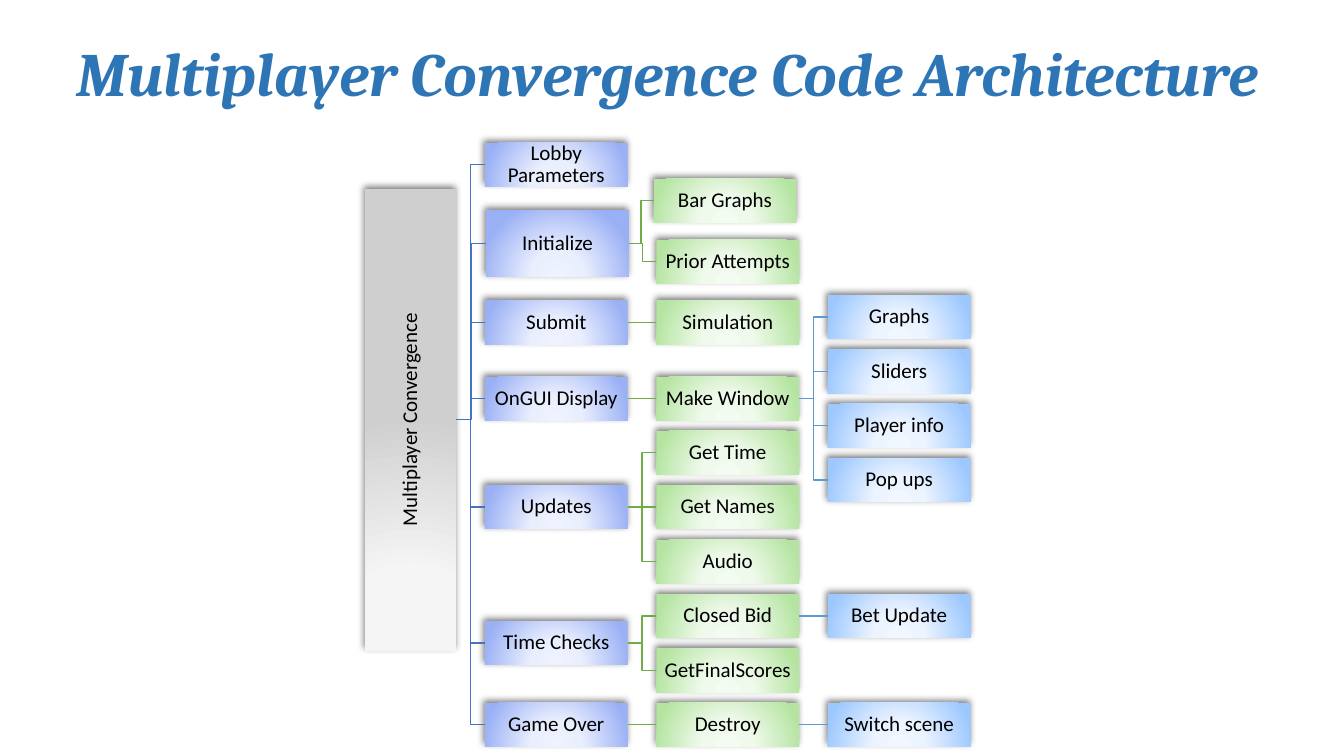
import lxml.etree
import pptx
import pptx.dml.color
import pptx.enum.shapes
import pptx.enum.text
import pptx.oxml
import pptx.util

Cm = pptx.util.Cm
Pt = pptx.util.Pt
RGB = pptx.dml.color.RGBColor
KIND = pptx.enum.shapes.MSO_CONNECTOR
RECT = pptx.enum.shapes.MSO_SHAPE.RECTANGLE
MID = pptx.enum.text.MSO_ANCHOR.MIDDLE
MAIN = "http://schemas.openxmlformats.org/drawingml/2006/main"

BLACK = RGB(0x00, 0x00, 0x00)
TITLE = RGB(0x2E, 0x75, 0xB6)
GREY = [RGB(0xF8, 0xF8, 0xF8), RGB(0xF5, 0xF5, 0xF5), RGB(0xCF, 0xCF, 0xCF)]
FILLS = [
    [RGB(0xEF, 0xF3, 0xFF), RGB(0xEA, 0xEF, 0xFE), RGB(0x9A, 0xB0, 0xF5)],
    [RGB(0xF3, 0xFC, 0xF0), RGB(0xF0, 0xFA, 0xEC), RGB(0xB4, 0xE4, 0xA0)],
    [RGB(0xF1, 0xF7, 0xFF), RGB(0xEC, 0xF4, 0xFF), RGB(0x9D, 0xC8, 0xFF)],
]
LINES = [RGB(0x44, 0x72, 0xC4), RGB(0x70, 0xAD, 0x47), RGB(0x5B, 0x9B, 0xD5)]

FRAME = {"vertical_anchor": MID, "word_wrap": True,
         "auto_size": pptx.enum.text.MSO_AUTO_SIZE.NONE}
TIGHT = dict.fromkeys(
    ["margin_left", "margin_top", "margin_right", "margin_bottom"], Cm(0.03))
PARA = {"alignment": pptx.enum.text.PP_ALIGN.CENTER, "line_spacing": 0.9}
LABEL = {"name": "Calibri", "size": Pt(15)}
HEAD = {"name": "Cambria", "size": Pt(44), "bold": True, "italic": True}

WIDE, HIGH = 3.6, 1.1
PITCH, STEP, FIRST = 1.37, 4.32, 3.02
ROOT_W, ROOT_H, ROOT_ROW = 2.29, 11.61, 5.61
ODD = {"Initialize": (0.03, 1.68), "Bar Graphs": (-0.07, HIGH)}

# Rows count upward from the bottom of the chart.
TREE = [
    ("Lobby Parameters", 10.3, []),
    ("Initialize", 8.85, [("Bar Graphs", 9.64, []),
                          ("Prior Attempts", 8.52, [])]),
    ("Submit", 7.4, [("Simulation", 7.4, [])]),
    ("OnGUI Display", 6, [("Make Window", 6, [
        ("Graphs", 7.5, []), ("Sliders", 6.5, []),
        ("Player info", 5.5, []), ("Pop ups", 4.5, [])])]),
    ("Updates", 4, [("Get Time", 5, []), ("Get Names", 4, []),
                    ("Audio", 3, [])]),
    ("Time Checks", 1.5, [("Closed Bid", 2, [("Bet Update", 2, [])]),
                          ("GetFinalScores", 1, [])]),
    ("Game Over", 0, [("Destroy", 0, [("Switch scene", 0, [])])]),
]


def style(item, vals):
    """Set each named value on the item."""
    for name, val in vals.items():
        setattr(item, name, val)


def write(frame, text, font, tint, para):
    """Fill a text frame with one formatted paragraph."""
    style(frame, FRAME)
    frame.text = text
    line = frame.paragraphs[0]
    style(line, para)
    style(line.runs[0].font, font)
    line.runs[0].font.color.rgb = tint


def paint(shape, tints):
    """Give a shape its round gradient and soft shadow."""
    stops = "".join(
        f'<a:gs pos="{pos}"><a:srgbClr val="{tint}"/></a:gs>'
        for pos, tint in zip((0, 34000, 100000), tints))
    fill = pptx.oxml.parse_xml(
        f'<a:gradFill xmlns:a="{MAIN}" rotWithShape="0"><a:gsLst>{stops}'
        '</a:gsLst><a:path path="circle"><a:fillToRect l="50000" t="155000" '
        'r="50000" b="-55000"/></a:path></a:gradFill>')
    shade = pptx.oxml.parse_xml(
        f'<a:outerShdw xmlns:a="{MAIN}" blurRad="63500" dist="25400" '
        'dir="14700000" algn="t" rotWithShape="0"><a:srgbClr val="000000">'
        '<a:alpha val="50000"/></a:srgbClr></a:outerShdw>')
    shape.line.fill.background()
    shape.shadow.inherit = False
    props = shape._element.spPr
    props.find(f"{{{MAIN}}}prstGeom").addnext(fill)
    props.find(f"{{{MAIN}}}effectLst").append(shade)


def block(slide, text, box, tints):
    """Draw one labelled box."""
    shape = slide.shapes.add_shape(RECT, *map(Cm, box))
    paint(shape, tints)
    style(shape.text_frame, TIGHT)
    write(shape.text_frame, text, LABEL, BLACK, PARA)
    return shape


def link(slide, start, child, tint, owner=None):
    """Join a start point to the left side of a child box."""
    end = child.left, child.top + child.height // 2
    flat = abs(start[1] - end[1]) < Cm(0.02)
    kind = KIND.STRAIGHT if flat else KIND.ELBOW
    wire = slide.shapes.add_connector(kind, *start, *end)
    if owner is not None:
        wire.begin_connect(owner, 3)
    wire.end_connect(child, 1)
    wire.line.color.rgb = tint
    wire.line.width = Pt(1)
    lxml.etree.SubElement(wire._element.spPr, f"{{{MAIN}}}effectLst")


def branch(slide, nodes, box, start, level=0, owner=None):
    """Draw a level of the tree and the levels under it."""
    left, top, _, height = box
    base = top + height - HIGH / 2
    for text, row, kids in nodes:
        shift, tall = ODD.get(text, (0, HIGH))
        place = (left + FIRST + level * STEP + shift,
                 base - row * PITCH - tall / 2, WIDE, tall)
        shape = block(slide, text, place, FILLS[level])
        link(slide, start, shape, LINES[level], owner)
        edge = shape.left + shape.width, shape.top + shape.height // 2
        branch(slide, kids, box, edge, level + 1, shape)


def chart(slide, box):
    """Draw the upright root box and its tree."""
    left, top, _, height = box
    mid = top + height - HIGH / 2 - ROOT_ROW * PITCH
    place = (left + (ROOT_W - ROOT_H) / 2, mid - ROOT_W / 2, ROOT_H, ROOT_W)
    root = block(slide, "Multiplayer Convergence", place, GREY)
    root.rotation = 270
    branch(slide, TREE, box, (Cm(left + ROOT_W), Cm(mid)))


def title(slide, box):
    """Place and format the slide title."""
    shape = slide.shapes.title
    style(shape, dict(zip(("left", "top", "width", "height"), map(Cm, box))))
    write(shape.text_frame, "Multiplayer Convergence Code Architecture",
          HEAD, TITLE, {"alignment": PARA["alignment"]})


def main():
    """Build and save the slide."""
    deck = pptx.Presentation()
    style(deck, {"slide_width": Cm(33.87), "slide_height": Cm(19.05)})
    slide = deck.slides.add_slide(deck.slide_layouts[5])
    title(slide, (1.55, 0.46, 30.56, 2.69))
    chart(slide, (9.2, 3.58, 15.25, 15.23))
    deck.save("out.pptx")


if __name__ == "__main__":
    main()
